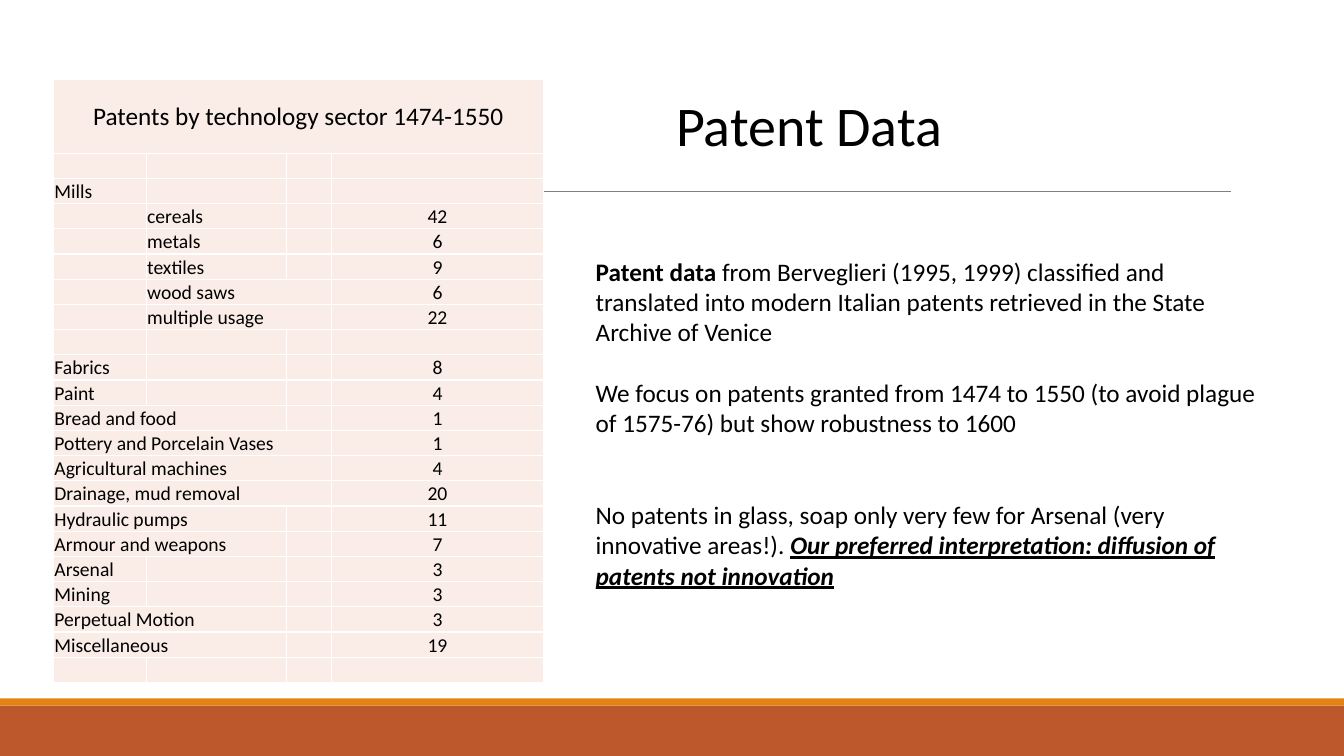
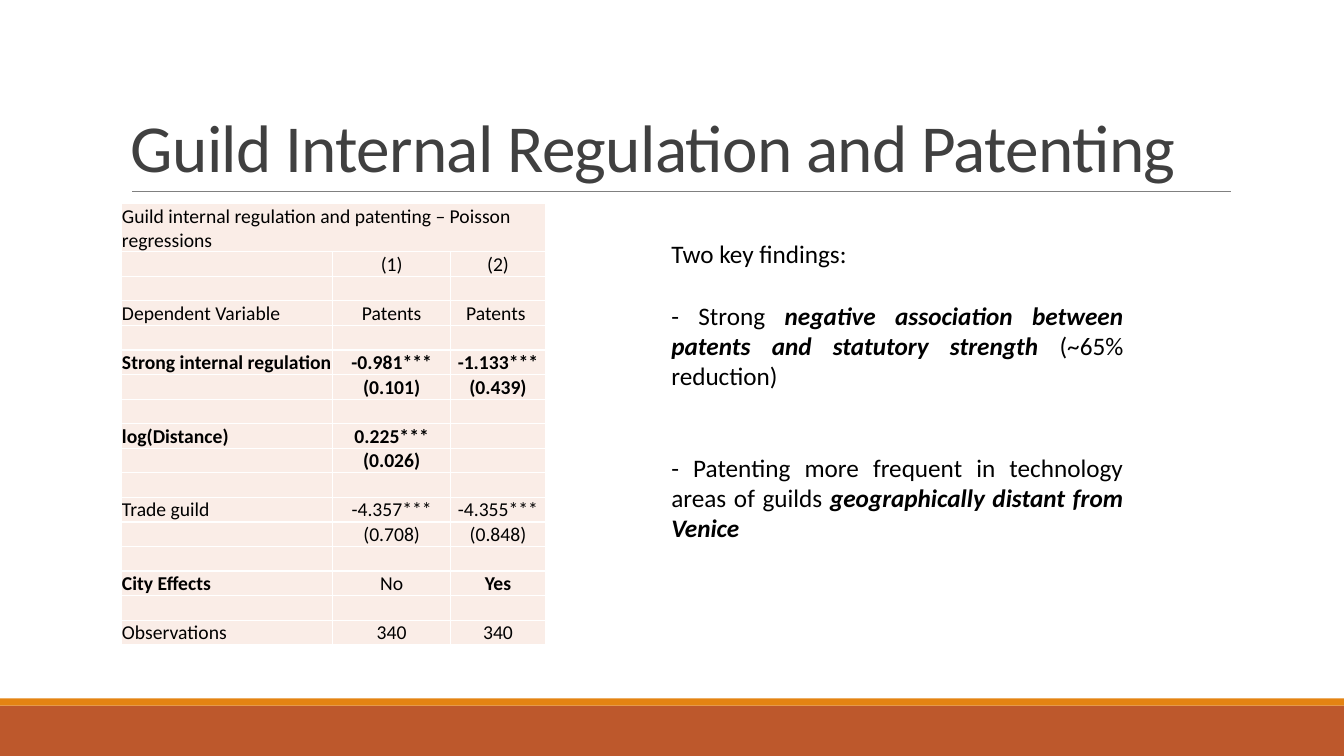
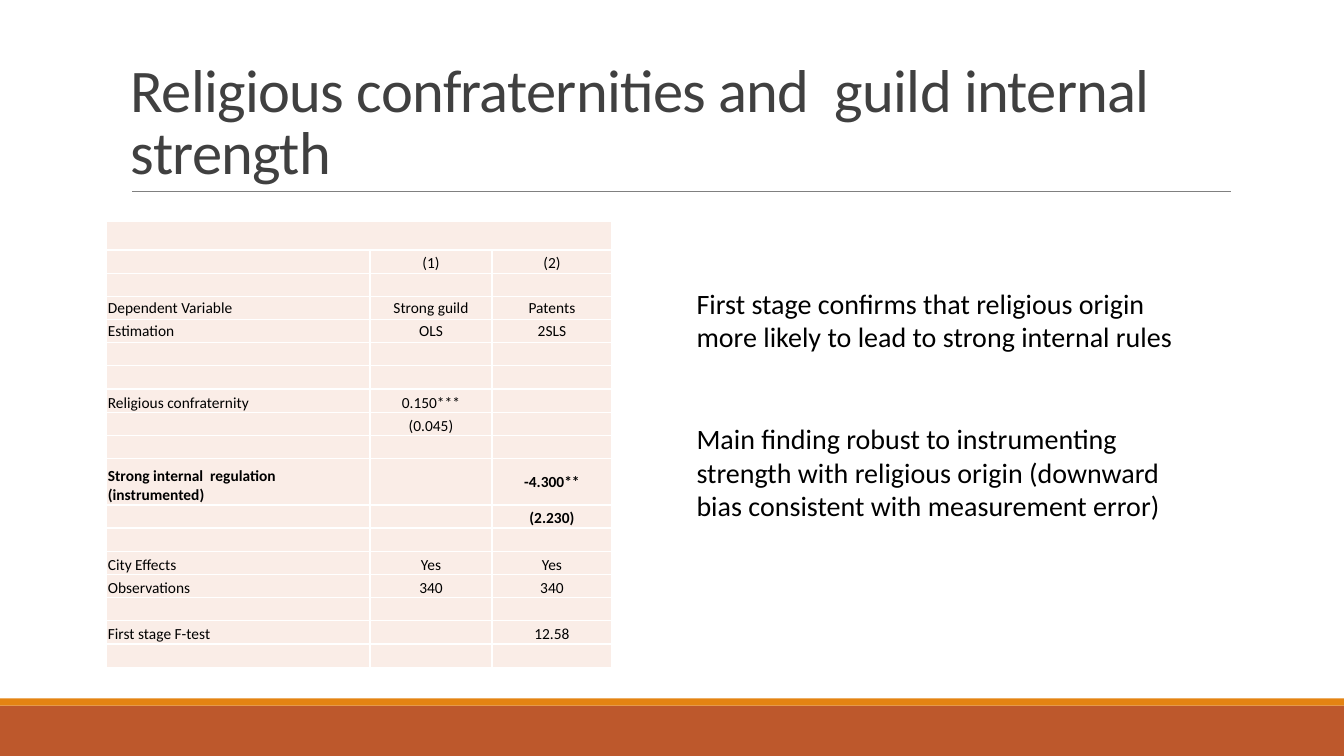
from itertools import product

from pptx import Presentation
from pptx.dml.color import RGBColor as RGB
from pptx.enum.shapes import MSO_CONNECTOR as CON, MSO_SHAPE as SHAPE
from pptx.enum.text import MSO_ANCHOR as ANC, MSO_AUTO_SIZE as AUTO, PP_ALIGN as AL
from pptx.oxml import parse_xml
from pptx.oxml.ns import nsdecls, qn
from pptx.util import Inches, Pt
from lxml.etree import SubElement

COL = {
    "band": "BD582C", "strip": "E48312", "rule": "808080", "head": "404040",
    "text": "000000", "cell": "FAEDE7", "edge": "FFFFFF",
}
FONT = "Calibri"
LINE = 1.22  # line height as a share of the font size


def rgb(name):
    return RGB.from_string(COL[name])


def add_run(para, text, size, col="text", marks=""):
    """Add one run; marks holds any of b (bold), i (italic), u (underline)."""
    run = para.add_run()
    run.text = text
    font = run.font
    font.name, font.size, font.color.rgb = FONT, Pt(size), rgb(col)
    font.bold, font.italic, font.underline = ("b" in marks, "i" in marks, "u" in marks)
    return run


def add_bar(slide, top, high, col):
    bar = slide.shapes.add_shape(
        SHAPE.RECTANGLE, 0, Inches(top), Inches(13.33), Inches(high))
    bar.shadow.inherit = False
    bar.fill.solid()
    bar.fill.fore_color.rgb = rgb(col)
    bar.line.fill.background()


def add_slide(deck):
    """Add a blank slide with the shared bands and the rule under the title."""
    slide = deck.slides.add_slide(deck.slide_layouts[6])
    add_bar(slide, 7, 0.5, "band")
    add_bar(slide, 6.93, 0.07, "strip")
    rule = slide.shapes.add_connector(
        CON.STRAIGHT, Inches(1.31), Inches(1.9), Inches(12.21), Inches(1.9))
    rule.line.color.rgb = rgb("rule")
    rule.line.width = Pt(0.5)
    SubElement(rule._element.spPr, qn("a:effectLst"))
    return slide


def add_box(slide, *area):
    frame = slide.shapes.add_textbox(*map(Inches, area)).text_frame
    frame.word_wrap = True
    return frame


def add_title(slide, text, size):
    frame = add_box(slide, 1.2, 0.31, 11, 1.59)
    frame.vertical_anchor = ANC.BOTTOM
    para = frame.paragraphs[0]
    para.line_spacing = 0.85
    run = add_run(para, text, size, "head")
    run.font._element.set("spc", "-50")


def add_text(slide, area, size, paras, align=AL.LEFT):
    """Add paragraphs, each given as (blank lines before, run, run, ...)."""
    frame = add_box(slide, *area)
    frame.auto_size = AUTO.SHAPE_TO_FIT_TEXT
    for n, (gap, *runs) in enumerate(paras):
        para = frame.add_paragraph() if n else frame.paragraphs[0]
        para.alignment = align
        if gap:
            para.space_before = Pt(round(gap * size * LINE, 1))
        for text, marks in runs:
            add_run(para, text, size, marks=marks)


def add_edges(cell):
    props = cell._tc.get_or_add_tcPr()
    for side in "LRTB":
        props.append(parse_xml(
            f'<a:ln{side} w="12700" {nsdecls("a")}><a:solidFill>'
            f'<a:srgbClr val="{COL["edge"]}"/></a:solidFill></a:ln{side}>'))


def fill_cell(cell, text, size, align, anchor, marks):
    add_edges(cell)
    cell.fill.solid()
    cell.fill.fore_color.rgb = rgb("cell")
    cell.margin_left = cell.margin_right = cell.margin_top = Inches(0.01)
    cell.margin_bottom = 0
    cell.vertical_anchor = anchor
    para = cell.text_frame.paragraphs[0]
    para.alignment = align
    if text:
        add_run(para, text, size, marks=marks)
    else:
        SubElement(para._p, qn("a:endParaRPr"), sz=str(size * 100))


def add_grid(slide, spot, wide, high, rows, size, left=1, bold=(), mid=()):
    """Add a table; None joins a cell to the one before, left counts left-aligned columns."""
    grid = slide.shapes.add_table(
        len(rows), len(wide), *map(Inches, (*spot, sum(wide), sum(high)))).table
    grid.first_row = grid.horz_banding = False
    for col, width in zip(grid.columns, wide):
        col.width = Inches(width)
    for r, row in enumerate(rows):
        grid.rows[r].height = Inches(high[r])
        for c, text in enumerate(row):
            fill_cell(grid.cell(r, c), text, size,
                      AL.LEFT if c < left else AL.CENTER,
                      ANC.MIDDLE if (r, c) in mid else ANC.BOTTOM,
                      "b" if (r, c) in bold else "")
        for c, text in enumerate(row):
            if text is not None:
                end = c
                while end + 1 < len(row) and row[end + 1] is None:
                    end += 1
                if end > c:
                    grid.cell(r, c).merge(grid.cell(r, end))
    return grid


def data_slide(deck):
    slide = add_slide(deck)
    gap = ("", "", "", "")
    rows = [
        ("Patents by technology sector 1474-1550", None, None, None),
        gap,
        ("Mills", "", "", ""),
        ("", "cereals", "", "42"),
        ("", "metals", "", "6"),
        ("", "textiles", "", "9"),
        ("", "wood saws", None, "6"),
        ("", "multiple usage", None, "22"),
        gap,
        ("Fabrics", "", "", "8"),
        ("Paint", "", "", "4"),
        ("Bread and food", None, "", "1"),
        ("Pottery and Porcelain Vases", None, None, "1"),
        ("Agricultural machines", None, None, "4"),
        ("Drainage, mud removal", None, None, "20"),
        ("Hydraulic pumps", None, "", "11"),
        ("Armour and weapons", None, "", "7"),
        ("Arsenal", "", "", "3"),
        ("Mining", "", "", "3"),
        ("Perpetual Motion", None, "", "3"),
        ("Miscellaneous", None, "", "19"),
        gap,
    ]
    grid = add_grid(slide, (0.53, 0.79), (0.92, 1.39, 0.45, 2.1),
                    [0.73] + [0.25] * 21, rows, 14, left=3, mid={(0, 0)})
    head = grid.cell(0, 0).text_frame.paragraphs[0]
    head.alignment = AL.CENTER
    head.runs[0].font.size = Pt(18)
    add_text(slide, (6.61, 0.85, 5.76, 0.77), 40, [(0, ("Patent Data", ""))])
    add_text(slide, (5.81, 2.49, 6.79, 3.74), 18, [
        (0, ("Patent data ", "b"),
         ("from Berveglieri (1995, 1999) classified and translated into modern "
          "Italian patents retrieved in the State Archive of Venice", "")),
        (1, ("We focus on patents granted from 1474 to 1550 (to avoid plague of "
             "1575-76) but show robustness to 1600", "")),
        (2, ("No patents in glass, soap only very few for Arsenal (very "
             "innovative areas!). ", ""),
         ("Our preferred interpretation: diffusion of patents not innovation", "biu")),
    ])


def guild_slide(deck):
    slide = add_slide(deck)
    add_title(slide, "Guild Internal Regulation and Patenting", 48)
    gap = ("", "", "")
    rows = [
        ("Guild internal regulation and patenting – Poisson regressions", None, None),
        ("", "(1)", "(2)"),
        gap,
        ("Dependent Variable", "Patents", "Patents "),
        gap,
        ("Strong internal regulation", "-0.981***", "-1.133***"),
        ("", "(0.101)", "(0.439)"),
        gap,
        ("log(Distance)", "0.225***", ""),
        ("", "(0.026)", ""),
        gap,
        ("Trade guild", "-4.357***", "-4.355***"),
        ("", "(0.708)", "(0.848)"),
        gap,
        ("City Effects", "No", "Yes"),
        gap,
        ("Observations", "340", "340"),
    ]
    bold = {*product((5, 6, 8, 9), range(3)), (14, 0), (14, 2)}
    add_grid(slide, (1.2, 2.02), (2.1, 1.17, 0.94), [0.46] + [0.23] * 16,
             rows, 14, bold=bold, mid={(0, 0)})
    add_text(slide, (6.56, 2.32, 4.68, 3.13), 18, [
        (0, ("Two key findings: ", "")),
        (1, ("- Strong ", ""),
         ("negative association between patents and statutory strength", "bi"),
         (" (~65% reduction)", "")),
        (2, ("- Patenting more frequent in technology areas of guilds ", ""),
         ("geographically distant from Venice", "bi")),
    ], AL.JUSTIFY)


def faith_slide(deck):
    slide = add_slide(deck)
    add_title(slide, "Religious confraternities and  guild internal strength", 43.2)
    gap = ("", "", "")
    rows = [
        ("", None, None),
        ("", "(1)", "(2)"),
        gap,
        ("Dependent Variable", "Strong guild", "Patents"),
        ("Estimation", "OLS", "2SLS"),
        gap,
        gap,
        ("Religious confraternity", "0.150***", ""),
        ("", "(0.045)", ""),
        gap,
        ("Strong internal  regulation (instrumented)", "", "-4.300**"),
        ("", "", "(2.230)"),
        gap,
        ("City Effects", "Yes", "Yes"),
        ("Observations", "340", "340"),
        gap,
        ("First stage F-test", "", "12.58"),
        gap,
    ]
    add_grid(slide, (1.06, 2.2), (2.61, 1.21, 1.19),
             [0.28] + [0.23] * 9 + [0.46] + [0.23] * 7, rows, 11,
             bold={(10, 0), (10, 2), (11, 2)},
             mid={*product((3, 4), range(3)), (10, 2)})
    add_text(slide, (6.81, 2.79, 5.25, 2.46), 20, [
        (0, ("First stage confirms that religious origin more likely to lead to "
             "strong internal rules", "")),
        (2, ("Main finding robust to instrumenting strength with religious origin "
             "(downward bias consistent with measurement error)", "")),
    ])


def main():
    deck = Presentation()
    deck.slide_width, deck.slide_height = Inches(13.33), Inches(7.5)
    data_slide(deck)
    guild_slide(deck)
    faith_slide(deck)
    deck.save("out.pptx")


if __name__ == "__main__":
    main()
